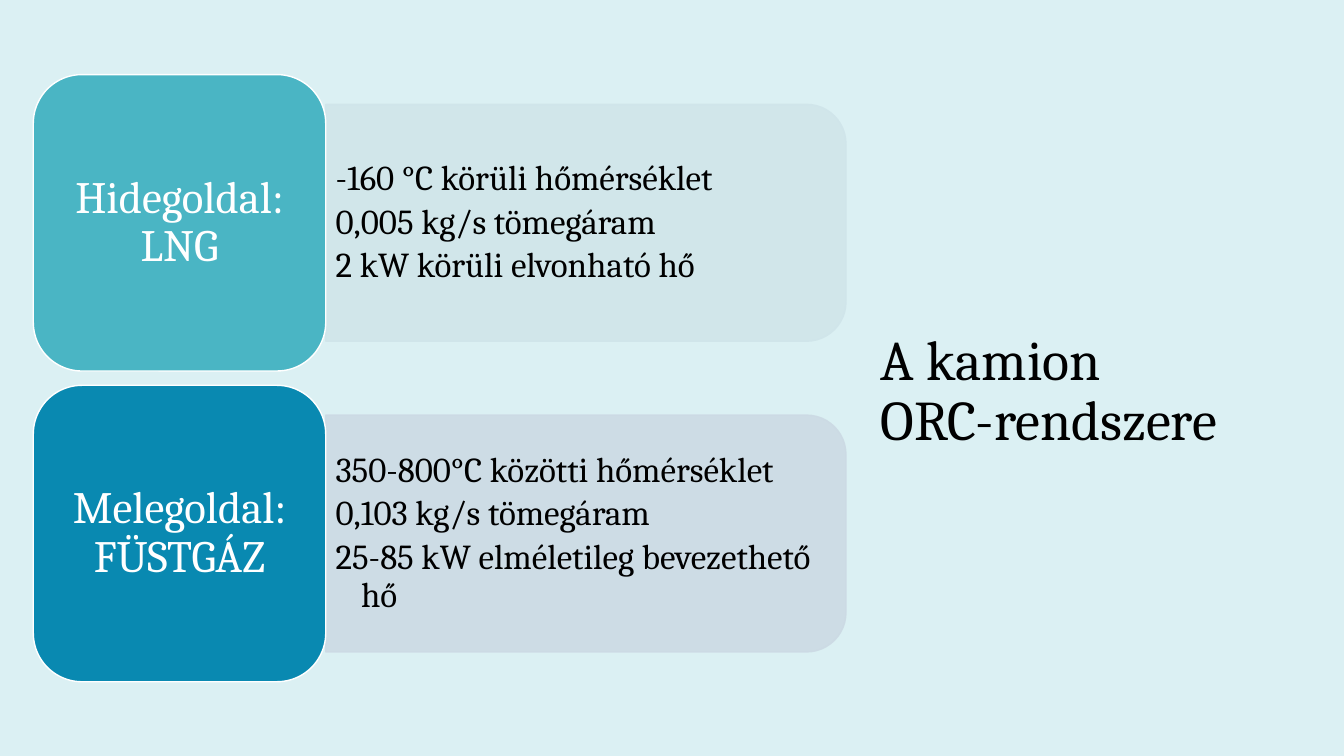
from lxml import etree
from pptx import Presentation
from pptx.dml.color import RGBColor
from pptx.enum.shapes import MSO_SHAPE
from pptx.enum.text import MSO_ANCHOR, PP_ALIGN
from pptx.oxml.ns import qn
from pptx.util import Cm, Pt

ROUNDED = MSO_SHAPE.ROUNDED_RECTANGLE
ROUNDED_TOP = MSO_SHAPE.ROUND_2_SAME_RECTANGLE
MIDDLE = MSO_ANCHOR.MIDDLE
LEFT, CENTER = PP_ALIGN.LEFT, PP_ALIGN.CENTER

TITLE = "A kamion\nORC-rendszere"
SIDES = [
    ("Hidegoldal: LNG", "cold", "cold_panel",
     ["-160 °C körüli hőmérséklet", "0,005 kg/s tömegáram", "2 kW körüli elvonható hő"]),
    ("Melegoldal: FÜSTGÁZ", "hot", "hot_panel",
     ["350-800°C közötti hőmérséklet", "0,103 kg/s tömegáram",
      "25-85 kW elméletileg bevezethető hő"]),
]
COLORS = {
    "background": "DBF0F3", "text": "000000", "white": "FFFFFF",
    "cold": "4AB5C4", "cold_panel": "D0E5EA",
    "hot": "0989B1", "hot_panel": "CCDAE4",
}
FONT = "Cambria"
TILE_LEFT, TILE_TOP, TILE_WIDTH, TILE_HEIGHT = 0.84, 1.88, 7.37, 7.47
ROW_PITCH = 7.83
PANEL_LENGTH, PANEL_HEIGHT = 13.11, 5.97
FACTS_WIDTH, FACTS_HEIGHT = 12.83, 5.38
PANEL_OPACITY = 90


def color(name):
    return RGBColor.from_string(COLORS[name])


def add_box(slide, kind, box, fill, line, opacity=100):
    shape = slide.shapes.add_shape(kind, *map(Cm, box))
    shape.shadow.inherit = False
    shape.fill.solid()
    shape.fill.fore_color.rgb = color(fill)
    shape.line.color.rgb = color(line)
    shape.line.width = Pt(1)
    if opacity < 100:
        for value in shape.element.spPr.iter(qn("a:srgbClr")):
            etree.SubElement(value, qn("a:alpha"), val=str(opacity * 1000))
    return shape


def write(shape, lines, size, ink="text", align=LEFT, after=0, hanging=0, inset=(0.25, 0.13)):
    frame = shape.text_frame
    frame.word_wrap = True
    frame.vertical_anchor = MIDDLE
    frame.margin_left = frame.margin_right = Cm(inset[0])
    frame.margin_top = frame.margin_bottom = Cm(inset[1])
    for index, line in enumerate(lines):
        paragraph = frame.add_paragraph() if index else frame.paragraphs[0]
        paragraph.text = line
        paragraph.alignment = align
        paragraph.line_spacing = 0.9
        paragraph.space_after = Pt(after)
        if hanging:
            properties = paragraph._p.get_or_add_pPr()
            properties.set("marL", str(Cm(hanging)))
            properties.set("indent", str(-Cm(hanging)))
        for run in paragraph.runs:
            run.font.name = FONT
            run.font.size = Pt(size)
            run.font.color.rgb = color(ink)


def add_side(slide, row, label, tile_color, panel_color, facts):
    top = TILE_TOP + row * ROW_PITCH
    middle = top + TILE_HEIGHT / 2
    panel_left = TILE_LEFT + TILE_WIDTH
    panel_center = panel_left + PANEL_LENGTH / 2
    panel = add_box(slide, ROUNDED_TOP,
                    (panel_center - PANEL_HEIGHT / 2, middle - PANEL_LENGTH / 2,
                     PANEL_HEIGHT, PANEL_LENGTH),
                    panel_color, panel_color, PANEL_OPACITY)
    panel.rotation = 90
    facts_box = slide.shapes.add_textbox(Cm(panel_left), Cm(middle - FACTS_HEIGHT / 2),
                                         Cm(FACTS_WIDTH), Cm(FACTS_HEIGHT))
    write(facts_box, facts, 25, after=4, hanging=0.64)
    tile = add_box(slide, ROUNDED, (TILE_LEFT, top, TILE_WIDTH, TILE_HEIGHT), tile_color, "white")
    write(tile, [label], 32, ink="white", align=CENTER, inset=(0.33, 0.18))


def main():
    """Build the slide on the two sides of the truck's ORC system."""
    presentation = Presentation()
    presentation.slide_width, presentation.slide_height = Cm(33.87), Cm(19.05)
    slide = presentation.slides.add_slide(presentation.slide_layouts[6])
    slide.background.fill.solid()
    slide.background.fill.fore_color.rgb = color("background")
    title = slide.shapes.add_textbox(Cm(21.95), Cm(2.24), Cm(10.46), Cm(15.29))
    write(title, [TITLE], 40)
    for row, side in enumerate(SIDES):
        add_side(slide, row, *side)
    presentation.save("out.pptx")


if __name__ == "__main__":
    main()
